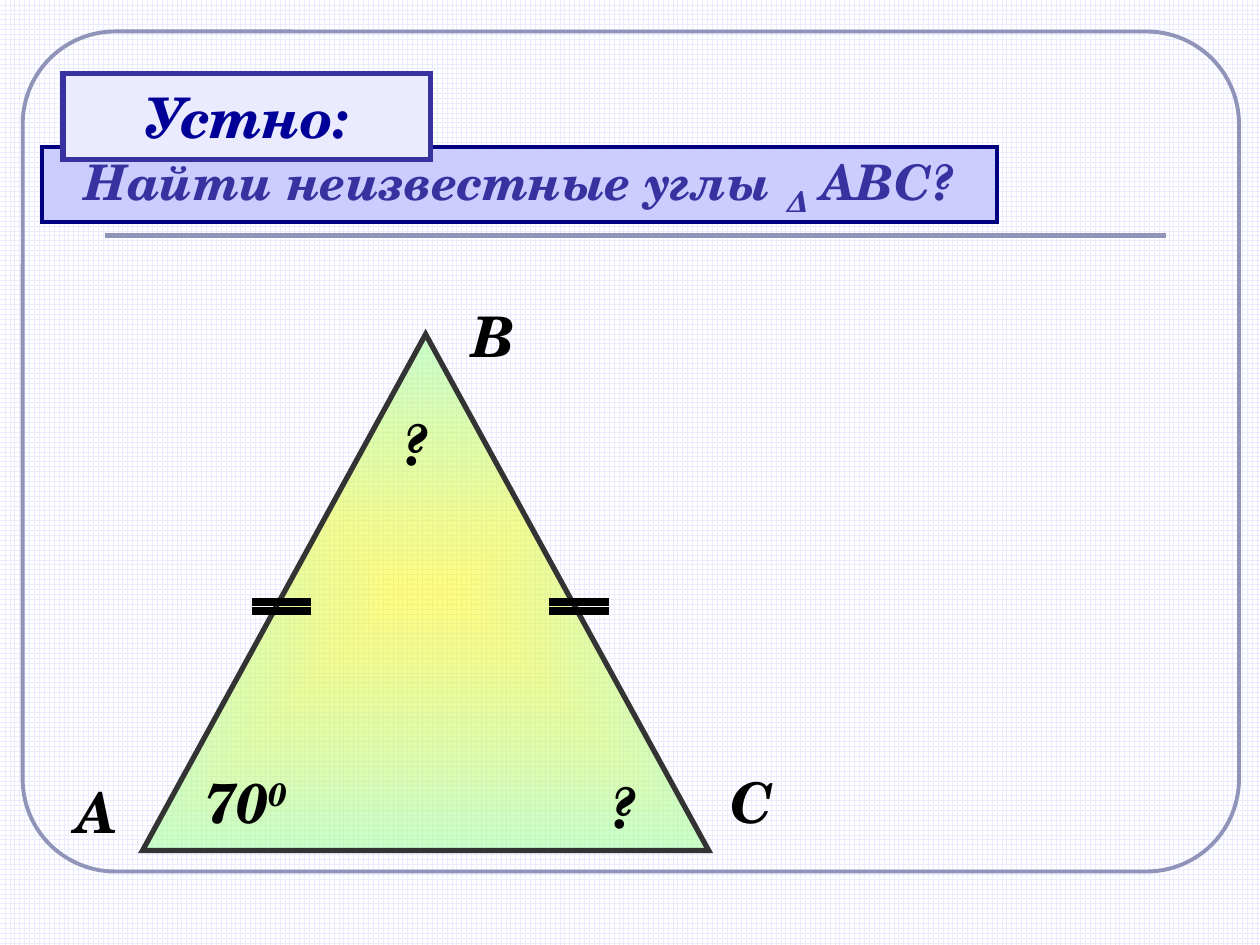
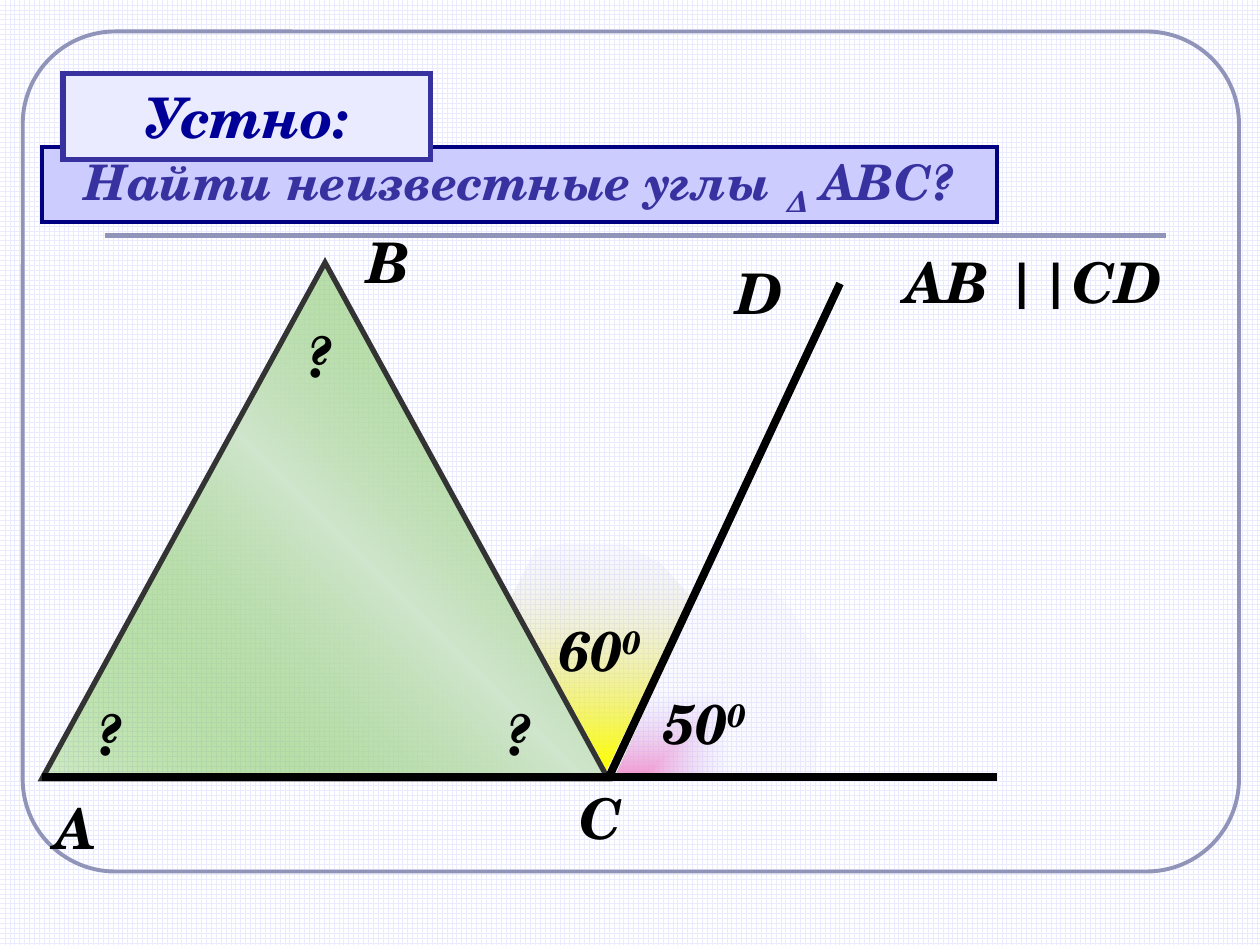
"""Build two slides of oral geometry exercises about the angles of a triangle."""
from lxml import etree
from pptx import Presentation
from pptx.dml.color import RGBColor
from pptx.enum.dml import MSO_PATTERN
from pptx.enum.shapes import MSO_CONNECTOR, MSO_SHAPE
from pptx.enum.text import MSO_ANCHOR, PP_ALIGN
from pptx.oxml import parse_xml
from pptx.oxml.ns import nsdecls, qn
from pptx.util import Pt

GRID = MSO_PATTERN.LARGE_GRID
STRAIGHT = MSO_CONNECTOR.STRAIGHT
RECTANGLE = MSO_SHAPE.RECTANGLE
ROUNDED = MSO_SHAPE.ROUNDED_RECTANGLE
TRIANGLE = MSO_SHAPE.ISOSCELES_TRIANGLE
CENTER, LEFT = PP_ALIGN.CENTER, PP_ALIGN.LEFT
MIDDLE, TOP = MSO_ANCHOR.MIDDLE, MSO_ANCHOR.TOP

FONT = "TeX Gyre Schola"
BLACK = RGBColor(0x00, 0x00, 0x00)
WHITE = RGBColor(0xFF, 0xFF, 0xFF)
PALE = RGBColor(0xEB, 0xEB, 0xFF)
LILAC = RGBColor(0xCC, 0xCC, 0xFF)
STEEL = RGBColor(0x90, 0x94, 0xB8)
NAVY = RGBColor(0x00, 0x00, 0x80)
INDIGO = RGBColor(0x37, 0x32, 0xA0)
BLUE = RGBColor(0x00, 0x00, 0x99)
CHARCOAL = RGBColor(0x33, 0x33, 0x33)
YELLOW = RGBColor(0xFF, 0xFA, 0x00)
MINT = RGBColor(0x9F, 0xFF, 0x9F)
LEAF = RGBColor(0x50, 0xB4, 0x1E)
MIST = RGBColor(0xD0, 0xE5, 0xCD)
LEMON = RGBColor(0xFF, 0xFF, 0x00)
PINK = RGBColor(0xF7, 0x8D, 0xCA)

HEADING = [("Устно:", 0)]
QUESTION = [("Найти неизвестные углы ", 0), ("Δ", -25), (" АВС?", 0)]
UNKNOWN = [("?", 0)]

LINEAR = '<a:lin ang="{}" scaled="1"/>'
FROM_CENTER = ('<a:path path="shape"><a:fillToRect l="50000" t="50000" '
               'r="50000" b="50000"/></a:path>')
FROM_CORNER = '<a:path path="rect"><a:fillToRect t="100000" r="100000"/></a:path>'

TRIANGLE_SIZE = (323.5, 295)
TICK_LENGTH = 34

EXERCISES = [
    {
        "wedges": [],
        "triangle": (81.5, 191),
        "gradient": ([(0, YELLOW, 49), (100, MINT, 54)], FROM_CENTER),
        "lines": [(left, y, left + TICK_LENGTH, y)
                  for left in (144, 314) for y in (344, 349)],
        "labels": [
            ([("А", 0)], 36, 440.5, 39),
            ([("В", 0)], 263, 168.5, 39),
            ([("С", 0)], 410.5, 435, 37.5),
            ([("70", 0), ("0", 30)], 109.5, 435, 76),
            (UNKNOWN, 223, 230.5, 34),
            (UNKNOWN, 342, 438, 34),
        ],
    },
    {
        "wedges": [
            ([(346.5, 440), (292.5, 341), (306.5, 313), (322.5, 310.5),
              (355, 310.5), (376.5, 321), (394, 340.5)],
             [(0, LILAC, 9), (100, LEMON, 100)], LINEAR.format(90 * 60000)),
            ([(352, 442), (401, 335.5), (441.5, 337), (452, 349),
              (468, 377.5), (470, 401), (465, 441.5)],
             [(0, PINK, 100), (100, LILAC, 9)], FROM_CORNER),
        ],
        "triangle": (24, 150),
        "gradient": ([(0, LEAF, 25), (50, MIST, 100), (100, LEAF, 25)],
                     LINEAR.format(315 * 60000)),
        "lines": [(24, 444, 570, 444), (348, 444, 480, 162)],
        "labels": [
            ([("А", 0)], 24, 450, 39),
            ([("В", 0)], 203, 126.5, 39),
            ([("С", 0)], 324, 444, 37.5),
            ([("D", 0)], 414, 144, 42),
            ([("50", 0), ("0", 30)], 372, 390, 102),
            ([("60", 0), ("0", 30)], 312, 348, 102),
            ([("АВ ||СD", 0)], 510, 138, 174),
            (UNKNOWN, 48, 396, 34),
            (UNKNOWN, 282, 396, 34),
            (UNKNOWN, 168, 180, 34),
        ],
    },
]


def write(box, spans, size, color, align=LEFT, anchor=TOP):
    frame = box.text_frame
    frame.word_wrap = True
    frame.vertical_anchor = anchor
    para = frame.paragraphs[0]
    para.alignment = align
    for text, baseline in spans:
        span = para.add_run()
        span.text = text
        font = span.font
        font.name, font.size = FONT, Pt(size)
        font.bold = font.italic = True
        font.color.rgb = color
        if baseline:
            font._element.set("baseline", str(baseline * 1000))


def add_outlined(page, kind, place, color, width, fill=None):
    shape = page.shapes.add_shape(kind, *map(Pt, place))
    shape.shadow.inherit = False
    if fill is None:
        shape.fill.background()
    else:
        shape.fill.solid()
        shape.fill.fore_color.rgb = fill
    shape.line.color.rgb = color
    shape.line.width = Pt(width)
    etree.SubElement(shape.line._ln, qn("a:miter"), lim="800000")
    return shape


def add_line(page, ends, color, width):
    line = page.shapes.add_connector(STRAIGHT, *map(Pt, ends))
    line.line.color.rgb = color
    line.line.width = Pt(width)
    etree.SubElement(line._element.spPr, qn("a:effectLst"))


def fill_gradient(shape, stops, direction):
    shape.fill.background()
    marks = "".join(
        f'<a:gs pos="{position * 1000}"><a:srgbClr val="{color}">'
        f'<a:alpha val="{opacity * 1000}"/></a:srgbClr></a:gs>'
        for position, color, opacity in stops)
    gradient = parse_xml(f'<a:gradFill {nsdecls("a")} rotWithShape="1">'
                         f'<a:gsLst>{marks}</a:gsLst>{direction}</a:gradFill>')
    properties = shape._element.spPr
    properties.replace(properties.find(qn("a:noFill")), gradient)


def add_wedge(page, corners, stops, direction):
    points = [(Pt(x), Pt(y)) for x, y in corners]
    builder = page.shapes.build_freeform(*points[0])
    builder.add_line_segments(points[1:], close=True)
    wedge = builder.convert_to_shape()
    wedge.shadow.inherit = False
    wedge.line.fill.background()
    fill_gradient(wedge, stops, direction)


def add_frame(page):
    backdrop = page.background.fill
    backdrop.patterned()
    backdrop.pattern = GRID
    backdrop.fore_color.rgb = PALE
    backdrop.back_color.rgb = WHITE
    border = add_outlined(page, ROUNDED, (13, 18, 695, 480), STEEL, 2.25)
    border.adjustments[0] = 0.11
    add_line(page, (60, 134.5, 666, 134.5), STEEL, 3)


def add_titles(page):
    question = add_outlined(page, RECTANGLE, (24, 84, 546, 43), NAVY, 2.25, LILAC)
    write(question, QUESTION, 28, INDIGO, CENTER, MIDDLE)
    heading = add_outlined(page, RECTANGLE, (36, 42, 210, 49), INDIGO, 3, PALE)
    write(heading, HEADING, 32, BLUE, CENTER, MIDDLE)


def add_exercise(deck, exercise):
    page = deck.slides.add_slide(deck.slide_layouts[6])
    add_frame(page)
    for wedge in exercise["wedges"]:
        add_wedge(page, *wedge)
    place = exercise["triangle"] + TRIANGLE_SIZE
    triangle = add_outlined(page, TRIANGLE, place, CHARCOAL, 3)
    fill_gradient(triangle, *exercise["gradient"])
    for ends in exercise["lines"]:
        add_line(page, ends, BLACK, 4.5)
    for spans, left, top, width in exercise["labels"]:
        box = page.shapes.add_textbox(Pt(left), Pt(top), Pt(width), Pt(45.5))
        write(box, spans, 32, BLACK)
    add_titles(page)


def main():
    deck = Presentation()
    deck.slide_width, deck.slide_height = Pt(720), Pt(540)
    for exercise in EXERCISES:
        add_exercise(deck, exercise)
    deck.save("out.pptx")


if __name__ == "__main__":
    main()
